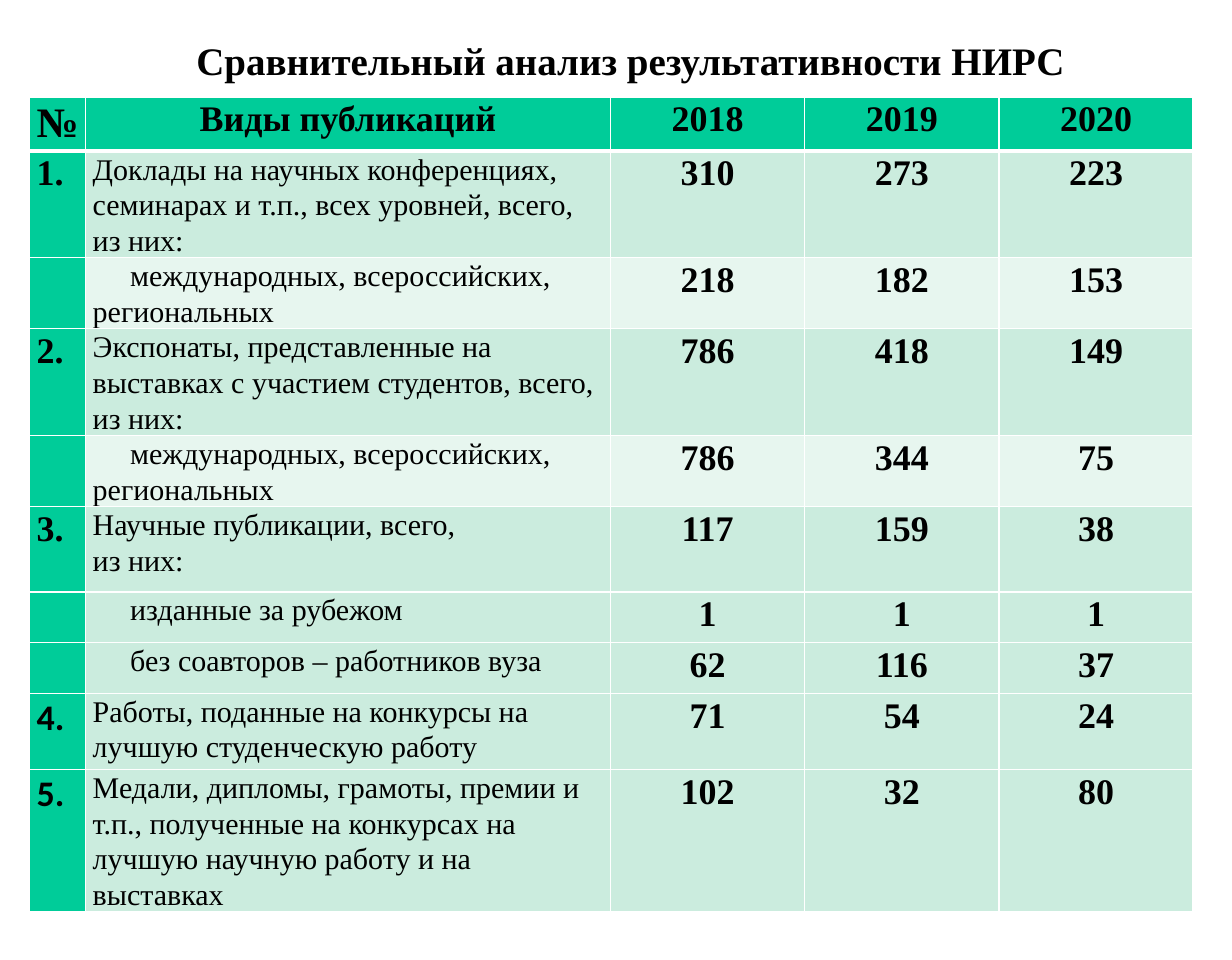
import pptx
import pptx.util
import pptx.dml.color
import pptx.enum.text
import pptx.oxml
import pptx.oxml.ns

SLIDE_WIDTH, SLIDE_HEIGHT = 11.42, 8.9
COLORS = {"header": "00CC99", "band": "CBECDE", "light": "E7F6EF",
          "border": "FFFFFF", "text": "000000"}
SERIF, SANS = "Times New Roman", "Calibri"

TITLE = "Сравнительный анализ результативности НИРС"
HEADER = ("№", "Виды публикаций", "2018", "2019", "2020")
REGIONS = "международных, всероссийских, региональных"
ROWS = [
    ("1.", "Доклады на научных конференциях, семинарах и т.п., всех уровней, всего,\nиз них:", 310, 273, 223),
    ("", REGIONS, 218, 182, 153),
    ("2.", "Экспонаты, представленные на выставках с участием студентов, всего,\nиз них:", 786, 418, 149),
    ("", REGIONS, 786, 344, 75),
    ("3.", "Научные публикации, всего,\nиз них:", 117, 159, 38),
    ("", "изданные за рубежом", 1, 1, 1),
    ("", "без соавторов – работников вуза", 62, 116, 37),
    ("4.", "Работы, поданные на конкурсы на лучшую студенческую работу", 71, 54, 24),
    ("5.", "Медали, дипломы, грамоты, премии и т.п., полученные на конкурсах на лучшую научную работу и на выставках", 102, 32, 80),
]
COLUMN_WIDTHS = [0.52, 4.87] + [1.8] * 3
ROW_HEIGHTS = [0.5, 0.98, 0.66, 0.98, 0.66, 0.79, 0.47, 0.47, 0.71, 1.31]
TABLE_LEFT, TABLE_TOP = 0.27, 0.9
TITLE_BOX = (0.98, 0.2, 9.74, 0.71)
SUBITEM_INDENT = 25

Inches, Pt = pptx.util.Inches, pptx.util.Pt
CENTER = pptx.enum.text.PP_ALIGN.CENTER
LEFT = pptx.enum.text.PP_ALIGN.LEFT


def rgb(name):
    return pptx.dml.color.RGBColor.from_string(COLORS[name])


def format_text(text_frame, size, bold, font, alignment, spacing):
    for paragraph in text_frame.paragraphs:
        paragraph.alignment = alignment
        paragraph.line_spacing = spacing
        for run in paragraph.runs:
            run.font.size = Pt(size)
            run.font.bold = bold
            run.font.name = font
            run.font.color.rgb = rgb("text")


def set_borders(cell, row):
    properties = cell._tc.get_or_add_tcPr()
    widths = {"L": 1, "R": 1, "T": 3 if row == 1 else 1, "B": 3 if row == 0 else 1}
    for side, width in widths.items():
        properties.append(pptx.oxml.parse_xml(
            f'<a:ln{side} {pptx.oxml.ns.nsdecls("a")} w="{Pt(width)}"><a:solidFill>'
            f'<a:srgbClr val="{COLORS["border"]}"/></a:solidFill></a:ln{side}>'))


def fill_name(row, column, label):
    if row == 0 or column == 0:
        return "header"
    return "light" if label == REGIONS else "band"


def format_cell(cell, row, column, values):
    cell.margin_left = cell.margin_right = Inches(0.07)
    cell.margin_top = cell.margin_bottom = 0
    set_borders(cell, row)
    cell.fill.solid()
    cell.fill.fore_color.rgb = rgb(fill_name(row, column, values[1]))
    cell.text_frame.text = str(values[column])
    is_label = row > 0 and column == 1
    size = 28 if row == column == 0 else 20 if is_label else 24
    font = SANS if values[column] in ("4.", "5.") else SERIF
    alignment = CENTER if row == 0 or column > 1 else LEFT
    format_text(cell.text_frame, size, not is_label, font, alignment, 1.07)
    if is_label and not values[0]:
        paragraph_properties = cell.text_frame.paragraphs[0]._p.get_or_add_pPr()
        paragraph_properties.set("indent", str(Pt(SUBITEM_INDENT)))


def add_title(slide):
    title = slide.shapes.title
    title.left, title.top, title.width, title.height = map(Inches, TITLE_BOX)
    frame = title.text_frame
    frame.text = TITLE
    frame.word_wrap = True
    frame.auto_size = pptx.enum.text.MSO_AUTO_SIZE.NONE
    frame.vertical_anchor = pptx.enum.text.MSO_ANCHOR.MIDDLE
    frame.margin_left = frame.margin_right = frame.margin_top = frame.margin_bottom = 0
    format_text(frame, 26, True, SERIF, CENTER, 1.01)


def add_results_table(slide):
    records = [HEADER] + ROWS
    table = slide.shapes.add_table(
        len(records), len(HEADER), Inches(TABLE_LEFT), Inches(TABLE_TOP),
        Inches(sum(COLUMN_WIDTHS)), Inches(sum(ROW_HEIGHTS))).table
    for column, width in zip(table.columns, COLUMN_WIDTHS):
        column.width = Inches(width)
    for row, height in zip(table.rows, ROW_HEIGHTS):
        row.height = Inches(height)
    for row, values in enumerate(records):
        for column in range(len(HEADER)):
            format_cell(table.cell(row, column), row, column, values)


def main():
    presentation = pptx.Presentation()
    presentation.slide_width = Inches(SLIDE_WIDTH)
    presentation.slide_height = Inches(SLIDE_HEIGHT)
    slide = presentation.slides.add_slide(presentation.slide_layouts[5])
    add_title(slide)
    add_results_table(slide)
    presentation.save("out.pptx")


if __name__ == "__main__":
    main()
